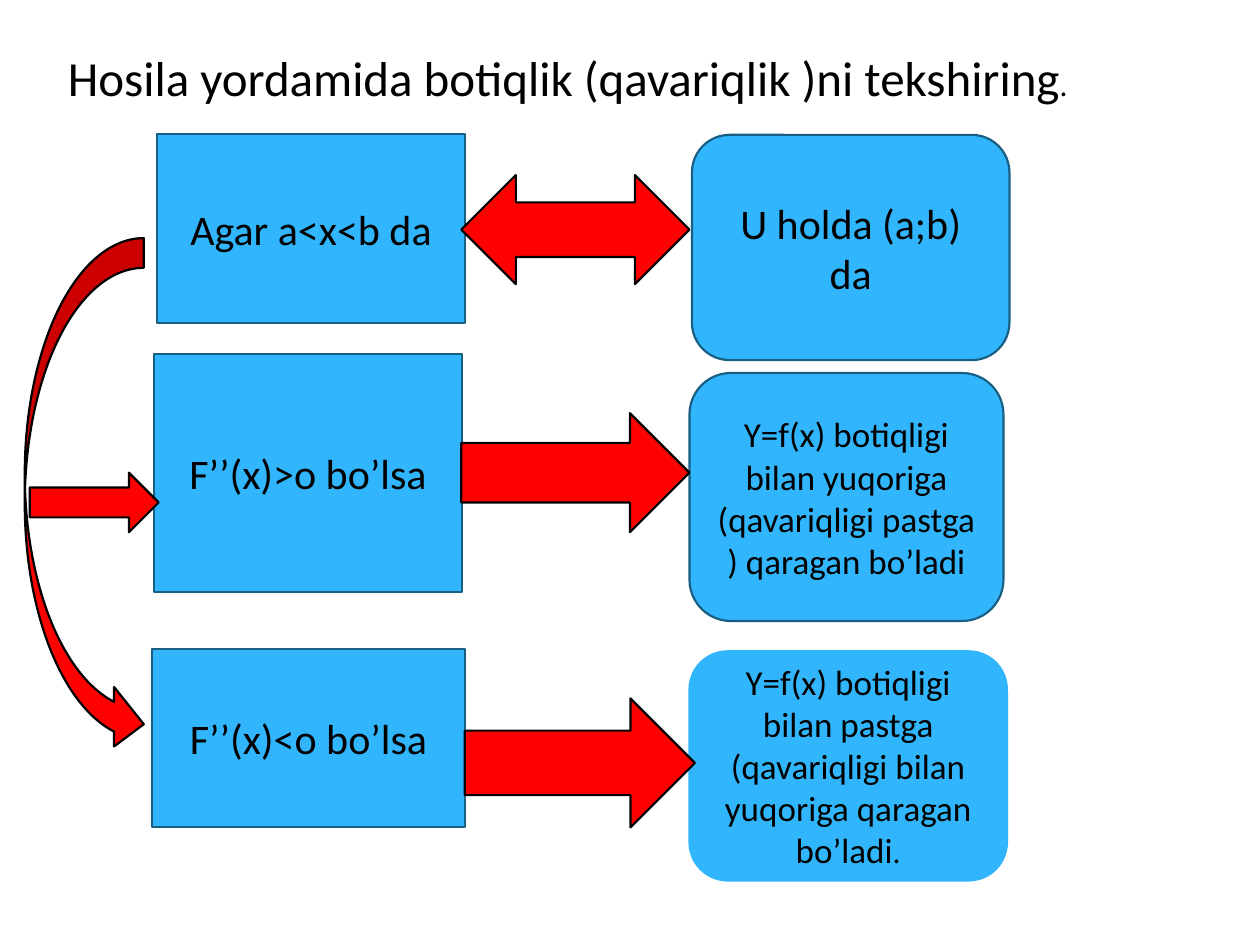
"""Build the slide on testing concavity and convexity with the derivative."""
from dataclasses import dataclass

from pptx import Presentation
from pptx import util as u
from pptx.dml.color import RGBColor
from pptx.enum import shapes, text
from pptx.shapes.autoshape import Shape
from pptx.slide import Slide

KIND = shapes.MSO_SHAPE


@dataclass(frozen=True)
class Theme:
    font: str = "Calibri"
    ink: str = "000000"
    blue: str = "31B6FD"
    edge: str = "195F84"
    red: str = "FF0000"
    line: float = 1.25
    title: int = 28
    large: int = 24
    medium: int = 20
    small: int = 18


THEME = Theme()


@dataclass(frozen=True)
class Area:
    left: float
    top: float
    width: float
    height: float

    def lengths(self) -> list[u.Cm]:
        return [u.Cm(value) for value in (self.left, self.top, self.width, self.height)]


@dataclass(frozen=True)
class Card:
    area: Area
    words: str
    size: int = THEME.large
    kind: KIND = KIND.RECTANGLE
    edge: str = THEME.edge
    ending: str = ""


@dataclass(frozen=True)
class Arrow:
    area: Area
    kind: KIND = KIND.RIGHT_ARROW


CARDS = (
    Card(Area(3.17, 2.71, 6.2, 3.81), "Agar a<x<b da"),
    Card(Area(3.1, 7.13, 6.22, 4.8), "F’’(x)>o bo’lsa"),
    Card(Area(3.07, 13.08, 6.3, 3.6), "F’’(x)<o bo’lsa"),
    Card(Area(13.95, 2.72, 6.4, 4.54), "U holda (a;b) da", kind=KIND.ROUNDED_RECTANGLE),
    Card(Area(13.9, 7.52, 6.33, 5),
         "Y=f(x) botiqligi bilan yuqoriga (qavariqligi pastga ) qaragan bo’ladi",
         THEME.medium, KIND.ROUNDED_RECTANGLE),
    Card(Area(13.9, 13.13, 6.4, 4.62),
         "Y=f(x) botiqligi bilan pastga (qavariqligi bilan yuqoriga qaragan bo’ladi",
         THEME.medium, KIND.ROUNDED_RECTANGLE, THEME.blue, "."),
)

ARROWS = (
    Arrow(Area(9.3, 3.53, 4.6, 2.2), KIND.LEFT_RIGHT_ARROW),
    Arrow(Area(9.3, 8.33, 4.6, 2.4)),
    Arrow(Area(9.37, 14.08, 4.64, 2.6)),
    Arrow(Area(0.5, 4.8, 2.4, 10.4), KIND.CURVED_RIGHT_ARROW),
    Arrow(Area(0.6, 9.53, 2.6, 1.2)),
)


def add_words(box: Shape, words: str, *, size: int) -> None:
    span = box.text_frame.paragraphs[0].add_run()
    span.text = words
    span.font.name = THEME.font
    span.font.size = u.Pt(size)
    span.font.color.rgb = RGBColor.from_string(THEME.ink)


def add_block(page: Slide, kind: KIND, area: Area, *, fill: str, edge: str) -> Shape:
    block = page.shapes.add_shape(kind, *area.lengths())
    block.shadow.inherit = False
    block.fill.solid()
    block.fill.fore_color.rgb = RGBColor.from_string(fill)
    block.line.color.rgb = RGBColor.from_string(edge)
    block.line.width = u.Pt(THEME.line)
    return block


def add_card(page: Slide, card: Card) -> None:
    box = add_block(page, card.kind, card.area, fill=THEME.blue, edge=card.edge)
    box.text_frame.word_wrap = True
    box.text_frame.vertical_anchor = text.MSO_ANCHOR.MIDDLE
    box.text_frame.paragraphs[0].alignment = text.PP_ALIGN.CENTER
    add_words(box, card.words, size=card.size)
    if card.ending:
        add_words(box, card.ending, size=THEME.small)


def add_title(page: Slide) -> None:
    box = page.shapes.add_textbox(*Area(1.12, 0.84, 21.7, 1.45).lengths())
    box.text_frame.word_wrap = False
    box.text_frame.auto_size = text.MSO_AUTO_SIZE.SHAPE_TO_FIT_TEXT
    add_words(box, "Hosila yordamida botiqlik (qavariqlik )ni tekshiring", size=THEME.title)
    add_words(box, ".", size=THEME.small)


def main() -> None:
    deck = Presentation()
    deck.slide_width, deck.slide_height = u.Cm(25.4), u.Cm(19.05)
    page = deck.slides.add_slide(deck.slide_layouts[6])
    for card in CARDS:
        add_card(page, card)
    for arrow in ARROWS:
        add_block(page, arrow.kind, arrow.area, fill=THEME.red, edge=THEME.ink)
    add_title(page)
    deck.save("out.pptx")


if __name__ == "__main__":
    main()
